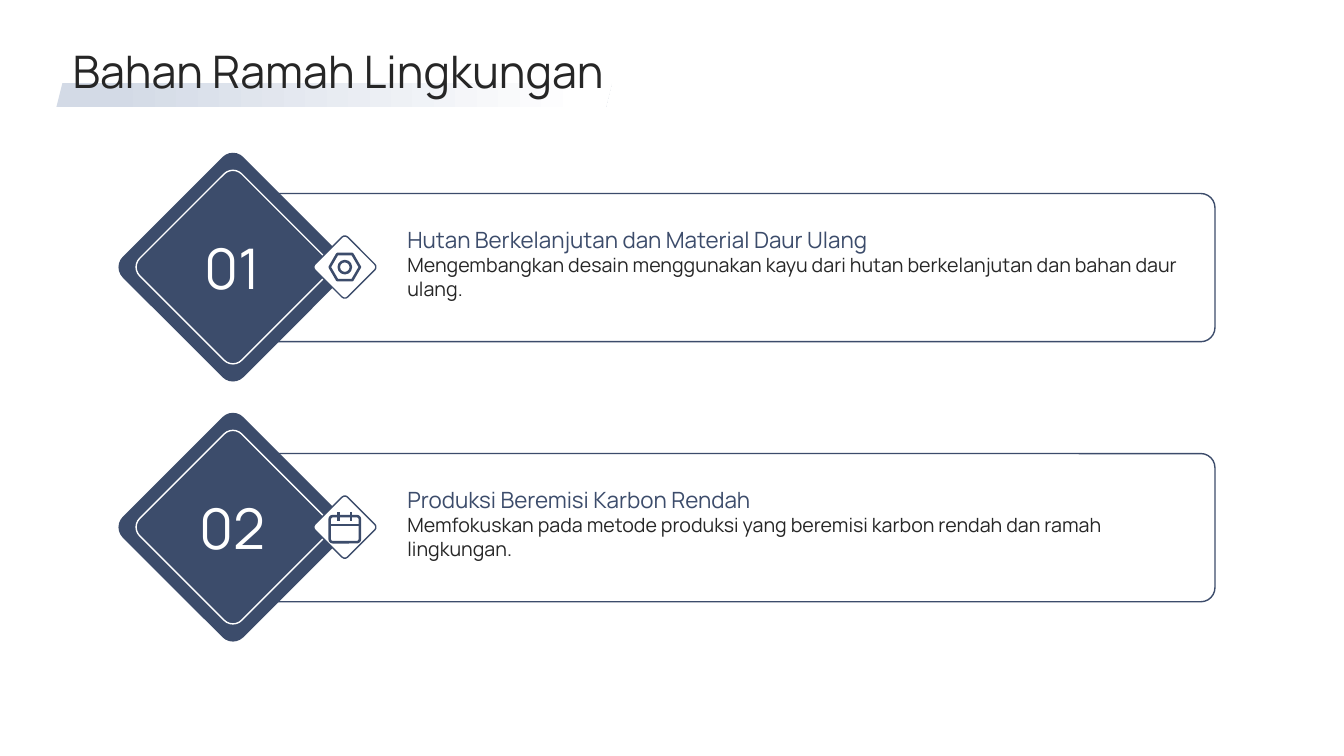
from lxml import etree
from pptx import Presentation
from pptx.dml.color import RGBColor
from pptx.enum import shapes, text
from pptx.oxml.ns import qn
from pptx.util import Inches, Pt

NAVY, INK, WHITE = "3C4C6B", "262626", "FFFFFF"
DIAMOND_X, BADGE_X = 2.31, 3.42
FIRST_ROW_Y, ROW_PITCH = 2.65, 2.58
SHAPE = shapes.MSO_SHAPE


def rgb(value):
    return RGBColor.from_string(value)


def box(left, top, width, height):
    return [Inches(v) for v in (left, top, width, height)]


def centred(x, y, width, height):
    return box(x - width / 2, y - height / 2, width, height)


def write(frame, content, size, color, anchor="TOP", align="LEFT"):
    """Fill a text frame with one formatted line of text and no insets."""
    frame.word_wrap = True
    frame.auto_size = text.MSO_AUTO_SIZE.NONE
    frame.margin_left = frame.margin_right = frame.margin_top = frame.margin_bottom = 0
    frame.vertical_anchor = text.MSO_ANCHOR[anchor]
    paragraph = frame.paragraphs[0]
    paragraph.alignment = text.PP_ALIGN[align]
    run = paragraph.add_run()
    run.text = content
    run.font.name, run.font.size = "Manrope", Pt(size)
    run.font.color.rgb = rgb(color)


def add_text(slide, place, content, **style):
    write(slide.shapes.add_textbox(*place).text_frame, content, **style)


def add_figure(slide, kind, place, fill=None, line=None, weight=1, corner=None, turn=0):
    figure = slide.shapes.add_shape(kind, *place)
    figure.shadow.inherit = False
    figure.rotation = turn
    if corner is not None:
        figure.adjustments[0] = corner
    if fill:
        figure.fill.solid()
        figure.fill.fore_color.rgb = rgb(fill)
    else:
        figure.fill.background()
    if line:
        figure.line.color.rgb = rgb(line)
        figure.line.width = Pt(weight)
    else:
        figure.line.fill.background()
    return figure


def add_diamond(slide, x, y, side, fill, line=None):
    add_figure(slide, SHAPE.ROUNDED_RECTANGLE, centred(x, y, side, side),
               fill=fill, line=line, corner=0.086, turn=45)


def add_stroke(slide, x1, y1, x2, y2):
    stroke = slide.shapes.add_connector(
        shapes.MSO_CONNECTOR.STRAIGHT, *box(x1, y1, x2, y2))
    stroke.line.color.rgb = rgb(NAVY)
    stroke.line.width = Pt(1.8)
    etree.SubElement(stroke._element.spPr, qn("a:effectLst"))


def add_nut_icon(slide, x, y):
    add_figure(slide, SHAPE.HEXAGON, centred(x, y, 0.3, 0.26),
               line=NAVY, weight=1.8, corner=0.29)
    add_figure(slide, SHAPE.OVAL, centred(x, y, 0.12, 0.12), line=NAVY, weight=1.8)


def add_calendar_icon(slide, x, y):
    add_figure(slide, SHAPE.ROUNDED_RECTANGLE, centred(x, y + 0.02, 0.3, 0.26),
               line=NAVY, weight=1.8, corner=0.12)
    add_stroke(slide, x - 0.15, y - 0.02, x + 0.15, y - 0.02)
    for ring_x in (x - 0.06, x + 0.06):
        add_stroke(slide, ring_x, y - 0.15, ring_x, y - 0.06)


def add_row(slide, y, number, heading, detail, add_icon):
    add_figure(slide, SHAPE.ROUNDED_RECTANGLE, box(2.47, y - 0.73, 9.58, 1.47),
               fill=WHITE, line=NAVY, corner=0.095)
    add_text(slide, box(4.04, y - 0.14, 7.68, 0.79), detail, size=14, color=INK)
    add_diamond(slide, DIAMOND_X, y, 1.69, NAVY)
    add_diamond(slide, DIAMOND_X, y, 1.43, NAVY, WHITE)
    add_diamond(slide, BADGE_X, y, 0.46, WHITE, NAVY)
    add_icon(slide, BADGE_X, y)
    add_text(slide, centred(DIAMOND_X, y, 0.93, 1.03), number,
             size=40, color=WHITE, anchor="MIDDLE", align="CENTER")
    add_text(slide, box(4.04, y - 0.61, 7.68, 0.47), heading,
             size=16, color=NAVY, anchor="BOTTOM")


def add_title(slide, content):
    """Set the title in front of a fading slanted underline."""
    underline = add_figure(slide, SHAPE.PARALLELOGRAM, box(0.56, 0.82, 5.51, 0.24))
    underline.fill.gradient()
    underline.fill.gradient_angle = 0
    fade = ((0.1, "D3DAE6"), (0.95, WHITE))
    for stop, (position, color) in zip(underline.fill.gradient_stops, fade):
        stop.position = position
        stop.color.rgb = rgb(color)
    title = slide.shapes.title
    title.left, title.top, title.width, title.height = box(0.72, 0.47, 11.88, 0.47)
    write(title.text_frame, content, size=32, color=INK, anchor="MIDDLE")
    underline._element.addnext(title._element)


def main():
    deck = Presentation()
    deck.slide_width, deck.slide_height = Inches(13.33), Inches(7.5)
    slide = deck.slides.add_slide(deck.slide_layouts.get_by_name("Title Only"))
    rows = (
        ("01", "Hutan Berkelanjutan dan Material Daur Ulang",
         "Mengembangkan desain menggunakan kayu dari hutan berkelanjutan dan bahan daur ulang.",
         add_nut_icon),
        ("02", "Produksi Beremisi Karbon Rendah",
         "Memfokuskan pada metode produksi yang beremisi karbon rendah dan ramah lingkungan.",
         add_calendar_icon),
    )
    for index, row in enumerate(rows):
        add_row(slide, FIRST_ROW_Y + index * ROW_PITCH, *row)
    add_title(slide, "Bahan Ramah Lingkungan")
    deck.save("out.pptx")


if __name__ == "__main__":
    main()
